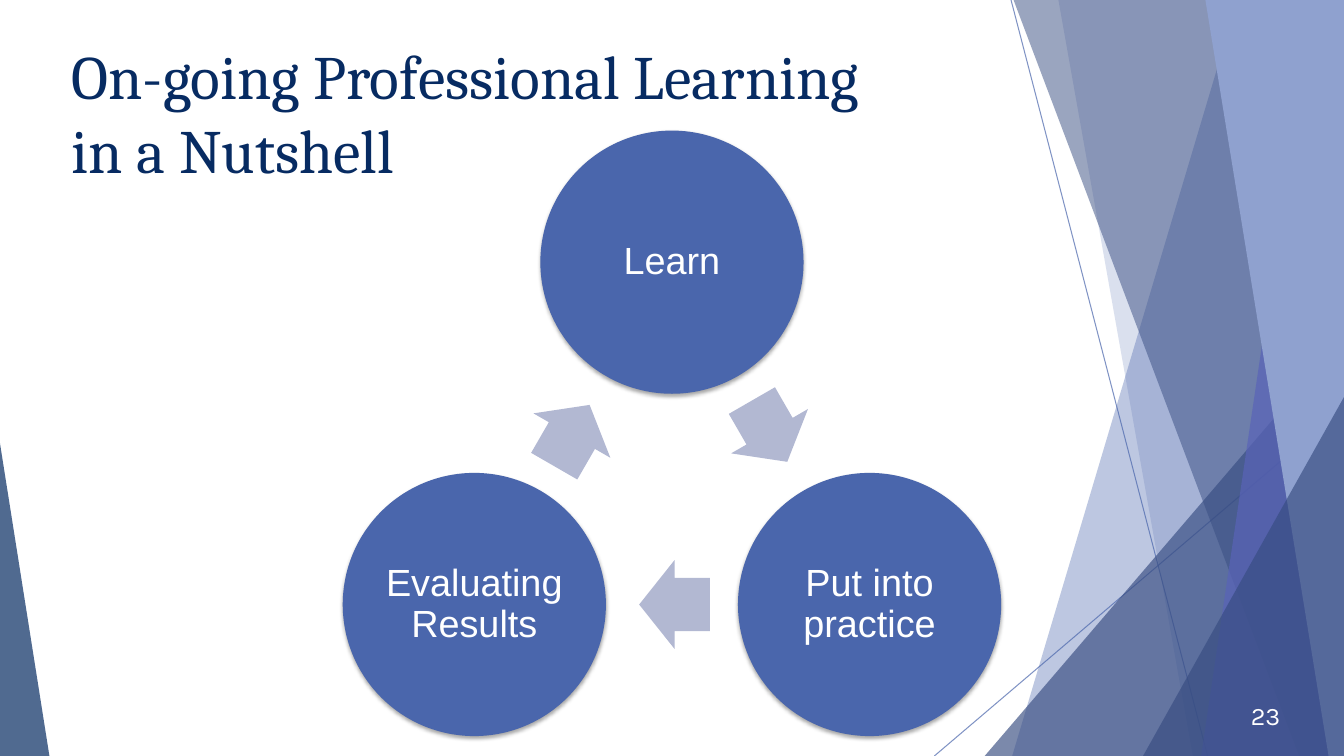
from math import atan2, cos, degrees, radians, sin
from pptx import Presentation
from pptx.dml.color import RGBColor
from pptx.enum.shapes import MSO_CONNECTOR, MSO_SHAPE
from pptx.enum.text import MSO_ANCHOR, MSO_AUTO_SIZE, PP_ALIGN
from pptx.oxml.ns import qn
from pptx.util import Pt
from lxml.etree import SubElement

WIDE, HIGH = 960, 540
TITLE = "On-going Professional Learning \vin a Nutshell"
STEPS = ["Learn", "Put into practice", "Evaluating Results"]
PAGE = "23"
HUES = {"blue": "4A66AC", "deep": "374C81", "plum": "5963B8", "pale": "8FA1CF",
        "navy": "072B62", "arrow": "B2B8D2", "white": "FFFFFF", "black": "000000"}

RULES = [(722.2, 0, 862.6, HIGH), (WIDE, 290.9, 667.4, HIGH)]
# kind, geometry, colour, opacity
DECOR = [
    ("band", (884.2, 722.9), "blue", 36),
    ("band", (756, 851.8), "blue", 20),
    ("wedge", (703.4, 240.5, 256.6, 1), "deep", 66),
    ("band", (723.6, 928.1), "deep", 50),
    ("band", (938.2, 858.2), "plum", 70),
    ("band", (861.1, 949), "pale", 100),
    ("wedge", (816.5, 283.7, 143.5, 1), "deep", 66),
    ("wedge", (0, 316.8, 35.3, 0), "navy", 70),
]
HUB, REACH, DISC = (480, 350.3), 163, 188
ARROW, LAG = (50.5, 63.4), 1.8


def fade(fill, alpha):
    if alpha < 100:
        tint = fill.find(".//" + qn("a:srgbClr"))
        SubElement(tint, qn("a:alpha"), val=str(alpha * 1000))


def paint(shape, hue, alpha=100):
    shape.shadow.inherit = False
    shape.fill.solid()
    shape.fill.fore_color.rgb = RGBColor.from_string(HUES[hue])
    shape.line.fill.background()
    fade(shape._element.spPr.find(qn("a:solidFill")), alpha)


def write(shape, text, frame, para, font, hue):
    body = shape.text_frame
    body.text = text
    for key, val in frame.items():
        setattr(body, key, val)
    for line in body.paragraphs:
        for key, val in para.items():
            setattr(line, key, val)
        for run in line.runs:
            for key, val in font.items():
                setattr(run.font, key, val)
            run.font.color.rgb = RGBColor.from_string(HUES[hue])


def pad(side, edge):
    return {"word_wrap": True, "auto_size": MSO_AUTO_SIZE.NONE,
            "margin_left": Pt(side), "margin_right": Pt(side),
            "margin_top": Pt(edge), "margin_bottom": Pt(edge)}


def drop(shape):
    cast = SubElement(shape._element.spPr.find(qn("a:effectLst")), qn("a:outerShdw"),
                      blurRad=str(Pt(3.1)), dist=str(Pt(1.8)), dir="5400000",
                      rotWithShape="0")
    tint = SubElement(cast, qn("a:srgbClr"), val=HUES["black"])
    SubElement(tint, qn("a:alpha"), val="35000")


deck = Presentation()
deck.slide_width, deck.slide_height = Pt(WIDE), Pt(HIGH)
slide = deck.slides.add_slide(deck.slide_layouts[5])
shapes = slide.shapes

for ends in RULES:
    rule = shapes.add_connector(MSO_CONNECTOR.STRAIGHT, *map(Pt, ends))
    rule.line.width = Pt(0.75)
    rule.line.color.rgb = RGBColor.from_string(HUES["blue"])
    fade(rule.line._ln, 70)
    SubElement(rule._element.spPr, qn("a:effectLst"))

for kind, geo, hue, alpha in DECOR:
    if kind == "band":
        top, foot = geo
        pen = shapes.build_freeform(top, 0, scale=Pt(1))
        pen.add_line_segments([(WIDE, 0), (WIDE, HIGH), (foot, HIGH)], close=True)
        part = pen.convert_to_shape()
    else:
        left, top, width, peak = geo
        part = shapes.add_shape(MSO_SHAPE.ISOSCELES_TRIANGLE, Pt(left), Pt(top),
                                Pt(width), Pt(HIGH - top))
        part.adjustments[0] = peak
    paint(part, hue, alpha)

title = shapes.title
title.left, title.top, title.width, title.height = map(Pt, (44, 20, 708, 104))
write(title, TITLE, {**pad(7.2, 7.2), "vertical_anchor": MSO_ANCHOR.TOP},
      {"alignment": PP_ALIGN.LEFT}, {"size": Pt(44), "name": "Cambria"}, "navy")
shapes._spTree.append(title._element)

page = shapes.add_textbox(*map(Pt, (867.6, 496.8, 54, 28.8)))
write(page, PAGE, {**pad(7.2, 3.6), "vertical_anchor": MSO_ANCHOR.MIDDLE},
      {"alignment": PP_ALIGN.RIGHT}, {"size": Pt(18), "name": "Karla"}, "white")

turns = [radians(-90 + 360 * i / len(STEPS)) for i in range(len(STEPS))]
spots = [(HUB[0] + REACH * cos(t), HUB[1] + REACH * sin(t)) for t in turns]
for i, (step, (x, y)) in enumerate(zip(STEPS, spots)):
    disc = shapes.add_shape(MSO_SHAPE.OVAL, Pt(x - DISC / 2), Pt(y - DISC / 2),
                            Pt(DISC), Pt(DISC))
    paint(disc, "blue")
    drop(disc)
    write(disc, step, {**pad(2.7, 2.7), "vertical_anchor": MSO_ANCHOR.MIDDLE},
          {"alignment": PP_ALIGN.CENTER, "line_spacing": 0.9},
          {"size": Pt(27), "name": "Arial"}, "white")

    nx, ny = spots[(i + 1) % len(spots)]
    way = atan2(ny - y, nx - x)
    mx, my = (x + nx) / 2 - LAG * cos(way), (y + ny) / 2 - LAG * sin(way)
    width, height = ARROW
    arrow = shapes.add_shape(MSO_SHAPE.RIGHT_ARROW, Pt(mx - width / 2),
                             Pt(my - height / 2), Pt(width), Pt(height))
    arrow.rotation = round(degrees(way)) % 360
    arrow.adjustments[0], arrow.adjustments[1] = 0.6, 0.5
    paint(arrow, "arrow")

deck.save("out.pptx")
